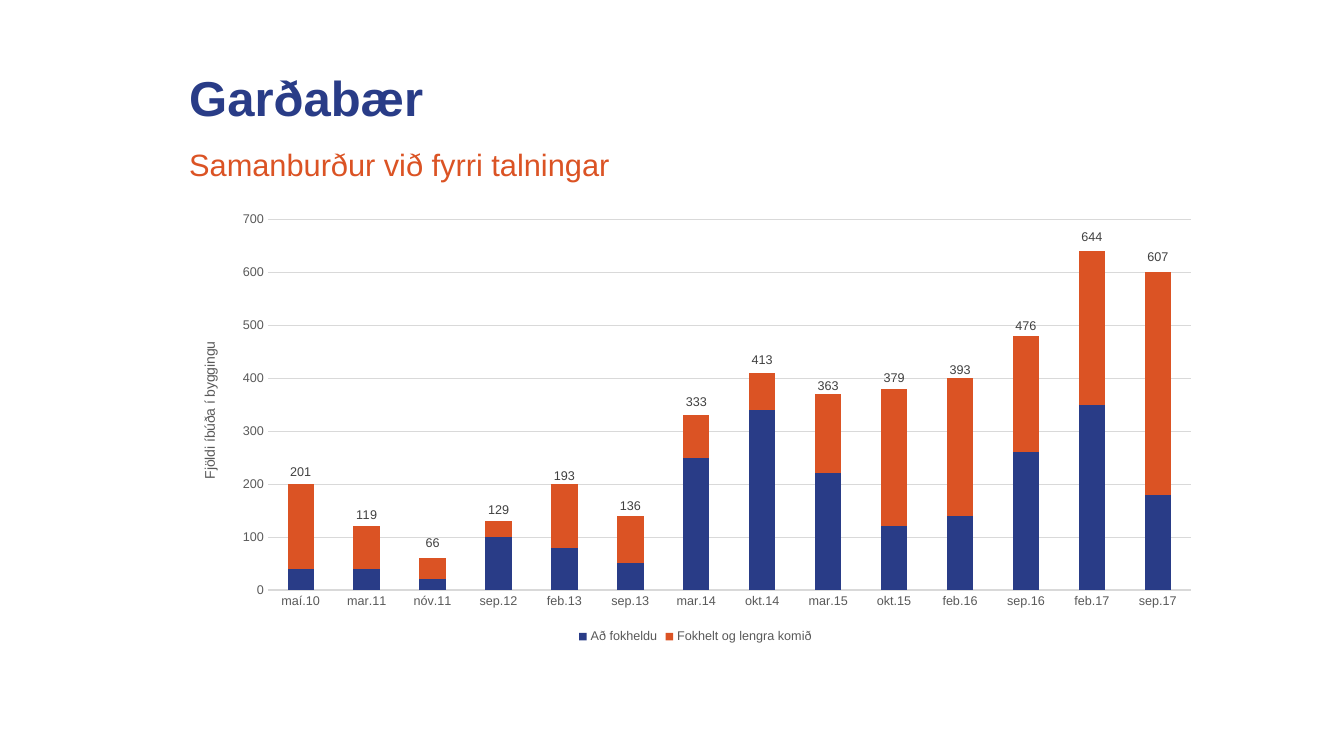
import pptx
import pptx.chart.data
import pptx.dml.color
import pptx.enum.chart
import pptx.enum.text
import pptx.oxml
import pptx.util

NAVY, ORANGE, GREY, DARK, RULE = "293C87", "DB5324", "595959", "404040", "D9D9D9"
MONTHS = ["maí.10", "mar.11", "nóv.11", "sep.12", "feb.13", "sep.13", "mar.14",
          "okt.14", "mar.15", "okt.15", "feb.16", "sep.16", "feb.17", "sep.17"]
UNROOFED = [40, 40, 20, 100, 80, 50, 250, 340, 220, 120, 140, 260, 350, 180]
ROOFED = [160, 80, 40, 30, 120, 90, 80, 70, 150, 260, 260, 220, 290, 420]
TOTALS = [201, 119, 66, 129, 193, 136, 333, 413, 363, 379, 393, 476, 644, 607]
CHART_NS = 'xmlns:c="http://schemas.openxmlformats.org/drawingml/2006/chart"'


def color(value):
    """Turn a hex string into a colour."""
    return pptx.dml.color.RGBColor.from_string(value)


def element(xml):
    """Parse a chart element whose root tag ends with the mark @."""
    return pptx.oxml.parse_xml(xml.replace("@", f" {CHART_NS}", 1))


class SlideBuilder:
    """Hold the style and the current slide."""

    def __init__(self, page, font_name="Arial"):
        """Keep the page and its font."""
        self.page = page
        self.font_name = font_name

    def set_font(self, font, size, shade, bold=False):
        """Style one font."""
        font.name = self.font_name
        font.size = pptx.util.Pt(size)
        font.bold = bold
        font.color.rgb = color(shade)

    def text(self, words, top, height, size, shade, anchor, bold=False):
        """Add a one-line heading."""
        box = self.page.shapes.add_textbox(
            *(pptx.util.Cm(length) for length in (4.52, top, 26.01, height)))
        frame = box.text_frame
        frame.word_wrap = True
        frame.vertical_anchor = anchor
        para = frame.paragraphs[0]
        para.text = words
        para.line_spacing = 0.9
        self.set_font(para.font, size, shade, bold)

    def stacked_chart(self, left, top, width, height):
        """Add the stacked columns with totals above them."""
        data = pptx.chart.data.CategoryChartData(number_format="#,##0")
        data.categories = MONTHS
        data.add_series("Að fokheldu", UNROOFED)
        data.add_series("Fokhelt og lengra komið", ROOFED)
        data.add_series("Series 3", TOTALS)
        kind = pptx.enum.chart.XL_CHART_TYPE.COLUMN_STACKED
        place = [pptx.util.Cm(length) for length in (left, top, width, height)]
        chart = self.page.shapes.add_chart(kind, *place, data).chart
        chart.has_title = False
        self.set_font(chart.font, 10, "000000")
        columns = chart.plots[0]
        columns.gap_width, columns.overlap = 150, 100
        columns.vary_by_categories = False
        for series, shade in zip(columns.series, (NAVY, ORANGE)):
            series.format.fill.solid()
            series.format.fill.fore_color.rgb = color(shade)
        self.style_axes(chart)
        self.move_totals_to_line(chart)
        self.style_totals(chart.plots[1])
        self.add_legend(chart)
        self.place_plot(chart, 2.23 / width, 0.4 / height, 23.26 / width, 9.34 / height)

    def style_axes(self, chart):
        """Style both visible axes and the gridlines."""
        for axis in (chart.category_axis, chart.value_axis):
            axis.major_tick_mark = pptx.enum.chart.XL_TICK_MARK.NONE
            axis.minor_tick_mark = pptx.enum.chart.XL_TICK_MARK.NONE
            self.set_font(axis.tick_labels.font, 9, GREY)
        values = chart.value_axis
        values.minimum_scale, values.maximum_scale, values.major_unit = 0, 700, 100
        values.tick_labels.number_format = "#,##0"
        values.tick_labels.number_format_is_linked = False
        values.format.line.fill.background()
        for line in (chart.category_axis.format.line, values.major_gridlines.format.line):
            line.width = pptx.util.Pt(0.75)
            line.color.rgb = color(RULE)
        frame = values.axis_title.text_frame
        frame.text = "Fjöldi íbúða í byggingu"
        frame._txBody.bodyPr.set("rot", "-5400000")
        frame._txBody.bodyPr.set("vert", "horz")
        self.set_font(frame.paragraphs[0].font, 10, GREY)

    def move_totals_to_line(self, chart):
        """Move the third series to a line on hidden second axes."""
        area = chart._chartSpace.chart.plotArea
        bars = area.find("{*}barChart")
        totals = bars.findall("{*}ser")[2]
        for flag in totals.findall("{*}invertIfNegative"):
            totals.remove(flag)
        line = element('<c:lineChart@><c:grouping val="standard"/><c:varyColors val="0"/>'
                       '<c:marker val="1"/><c:axId val="501"/><c:axId val="502"/></c:lineChart>')
        line.insert(2, totals)
        bars.addnext(line)
        last_axis = area.findall("{*}valAx")[-1]
        for tag, own, other, side, limits, crosses in (
                ("valAx", 502, 501, "r", '<c:max val="700"/><c:min val="0"/>', "max"),
                ("catAx", 501, 502, "b", "", "autoZero")):
            last_axis.addnext(element(
                f'<c:{tag}@><c:axId val="{own}"/><c:scaling><c:orientation val="minMax"/>{limits}'
                f'</c:scaling><c:delete val="1"/><c:axPos val="{side}"/>'
                f'<c:crossAx val="{other}"/><c:crosses val="{crosses}"/></c:{tag}>'))

    def style_totals(self, plot):
        """Show only the labels of the totals."""
        totals = plot.series[0]
        totals.smooth = False
        totals.format.line.fill.background()
        totals.marker.style = pptx.enum.chart.XL_MARKER_STYLE.NONE
        labels = totals.data_labels
        labels.show_value = True
        labels.position = pptx.enum.chart.XL_LABEL_POSITION.ABOVE
        labels.number_format = "#,##0"
        labels.number_format_is_linked = False
        self.set_font(labels.font, 9, DARK)

    def add_legend(self, chart):
        """Add the legend without the totals."""
        chart.has_legend = True
        legend = chart.legend
        legend.position = pptx.enum.chart.XL_LEGEND_POSITION.BOTTOM
        legend.include_in_layout = False
        self.set_font(legend.font, 9, GREY)
        entry = element('<c:legendEntry@><c:idx val="2"/><c:delete val="1"/></c:legendEntry>')
        position = [child for child in legend._element if child.tag.endswith("}legendPos")]
        legend._element.insert(len(position), entry)

    def place_plot(self, chart, left, top, width, height):
        """Fix the inner plot area by fractions of the chart."""
        area = chart._chartSpace.chart.plotArea
        for layout in area.findall("{*}layout"):
            area.remove(layout)
        sizes = "".join(f'<c:{name} val="{share:.4f}"/>' for name, share in
                        (("x", left), ("y", top), ("w", width), ("h", height)))
        area.insert(0, element(
            '<c:layout@><c:manualLayout><c:layoutTarget val="inner"/><c:xMode val="edge"/>'
            f'<c:yMode val="edge"/>{sizes}</c:manualLayout></c:layout>'))


def main():
    """Build and save the slide."""
    deck = pptx.Presentation()
    deck.slide_width, deck.slide_height = pptx.util.Cm(33.87), pptx.util.Cm(19.05)
    builder = SlideBuilder(deck.slides.add_slide(deck.slide_layouts[6]))
    anchors = pptx.enum.text.MSO_ANCHOR
    builder.text("Garðabær", 1.52, 1.8, 35, NAVY, anchors.BOTTOM, bold=True)
    builder.stacked_chart(4.52, 5.13, 26.01, 11.2)
    builder.text("Samanburður við fyrri talningar", 3.66, 1, 22, ORANGE, anchors.TOP)
    deck.save("out.pptx")


if __name__ == "__main__":
    main()
